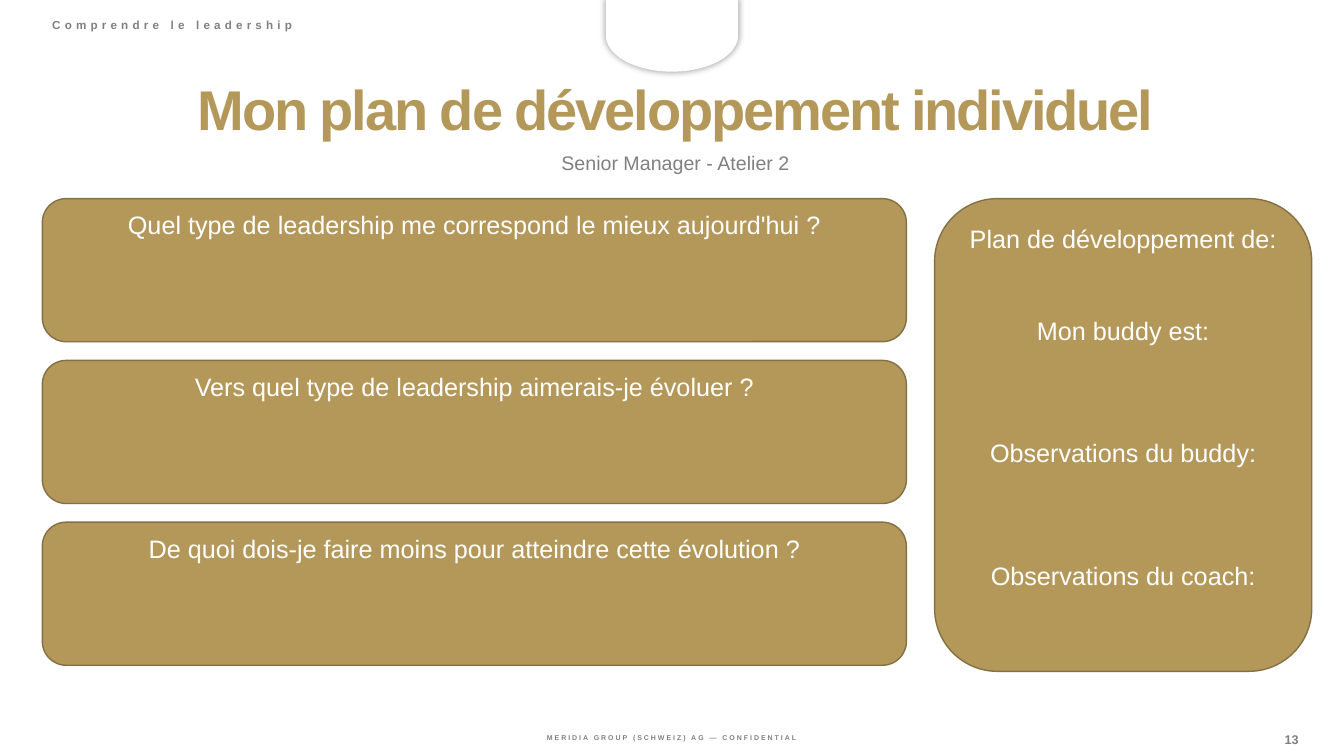
from lxml import etree
from pptx import Presentation
from pptx.dml.color import RGBColor
from pptx.enum.shapes import MSO_SHAPE as Shape
from pptx.enum.text import MSO_ANCHOR as Anchor, PP_ALIGN as Align
from pptx.oxml import parse_xml
from pptx.oxml.ns import nsdecls
from pptx.util import Inches, Pt

GOLD, DARK_GOLD, GREY, WHITE = "B3985A", "847043", "808080", "FFFFFF"


def rgb(code):
    return RGBColor.from_string(code)


class PlanSlide:
    font = "Arial"

    def __init__(self, presentation):
        self.slide = presentation.slides.add_slide(presentation.slide_layouts[6])

    def style(self, paragraph, size, color, bold=False, spacing=0, align=Align.CENTER):
        """Format a filled paragraph; spacing is the letter spacing in points."""
        paragraph.alignment = align
        for run in paragraph.runs:
            run.font.name = self.font
            run.font.size = Pt(size)
            run.font.bold = bold
            run.font.color.rgb = rgb(color)
            if spacing:
                run._r.get_or_add_rPr().set("spc", str(round(spacing * 100)))

    def text(self, box, words, size, color=GREY, line_spacing=1.0,
             anchor=Anchor.TOP, margins=True, **look):
        frame = self.slide.shapes.add_textbox(*map(Inches, box)).text_frame
        frame.word_wrap = True
        frame.vertical_anchor = anchor
        if not margins:
            frame.margin_left = frame.margin_right = 0
            frame.margin_top = frame.margin_bottom = 0
        frame.text = words
        frame.paragraphs[0].line_spacing = line_spacing
        self.style(frame.paragraphs[0], size, color, **look)

    def shape(self, kind, box, fill, line):
        shape = self.slide.shapes.add_shape(kind, *map(Inches, box))
        shape.shadow.inherit = False
        shape.fill.solid()
        shape.fill.fore_color.rgb = rgb(fill)
        shape.line.color.rgb = rgb(line)
        shape.line.width = Pt(1)
        return shape

    def panel(self, box, prompts, top_margin, gaps):
        """Rounded panel with prompts; gaps are the points left above each one."""
        frame = self.shape(Shape.ROUNDED_RECTANGLE, box, GOLD, DARK_GOLD).text_frame
        frame.word_wrap = True
        frame.vertical_anchor = Anchor.TOP
        frame.margin_top = Inches(top_margin)
        frame.text = "\n".join(prompts)
        for paragraph, gap in zip(frame.paragraphs, gaps):
            if gap:
                paragraph.space_before = Pt(gap)
            self.style(paragraph, 18, WHITE)

    def tab(self, box):
        """White tab hanging from the top edge, with a soft shadow."""
        tab = self.shape(Shape.FLOWCHART_DELAY, box, WHITE, WHITE)
        tab.rotation = 90
        effects = tab._element.spPr.find("{*}effectLst")
        effects.append(parse_xml(
            f'<a:outerShdw {nsdecls("a")} blurRad="{Pt(5)}" dist="0" dir="0">'
            '<a:srgbClr val="000000"><a:alpha val="40000"/></a:srgbClr></a:outerShdw>'))


def main():
    presentation = Presentation()
    presentation.slide_width = Inches(13.33)
    presentation.slide_height = Inches(7.5)
    plan = PlanSlide(presentation)

    plan.text((4.13, 7.28, 5.07, 0.1), "MERIDIA GROUP (SCHWEIZ) AG — CONFIDENTIAL",
              5, bold=True, spacing=1.4, margins=False)
    plan.tab((6.31, -0.3, 0.71, 1.3))
    plan.text((12.43, 7.26, 0.76, 0.16), "13", 9, bold=True, margins=False)
    plan.text((0.41, 1.49, 12.58, 0.31), "Senior Manager - Atelier 2", 14,
              line_spacing=0.8)
    plan.text((0.41, 0.76, 12.58, 0.71), "Mon plan de développement individuel", 40,
              GOLD, line_spacing=0.9, anchor=Anchor.MIDDLE, bold=True, spacing=-1.5)
    plan.text((0.42, 0.16, 4.87, 0.21), "Comprendre le leadership", 8.3,
              line_spacing=0.8, bold=True, spacing=3, align=Align.LEFT)

    plan.panel((9.27, 1.97, 3.74, 4.69),
               ["Plan de développement de:", "Mon buddy est:",
                "Observations du buddy:", "Observations du coach:"],
               0.06, [0, 44, 66, 66])
    questions = ["Quel type de leadership me correspond le mieux aujourd'hui ?",
                 "Vers quel type de leadership aimerais-je évoluer ?",
                 "De quoi dois-je faire moins pour atteindre cette évolution ?"]
    for row, question in enumerate(questions):
        plan.panel((0.42, 1.97 + row * 1.605, 8.57, 1.42), [question], 0.04, [0])

    presentation.save("out.pptx")


if __name__ == "__main__":
    main()
